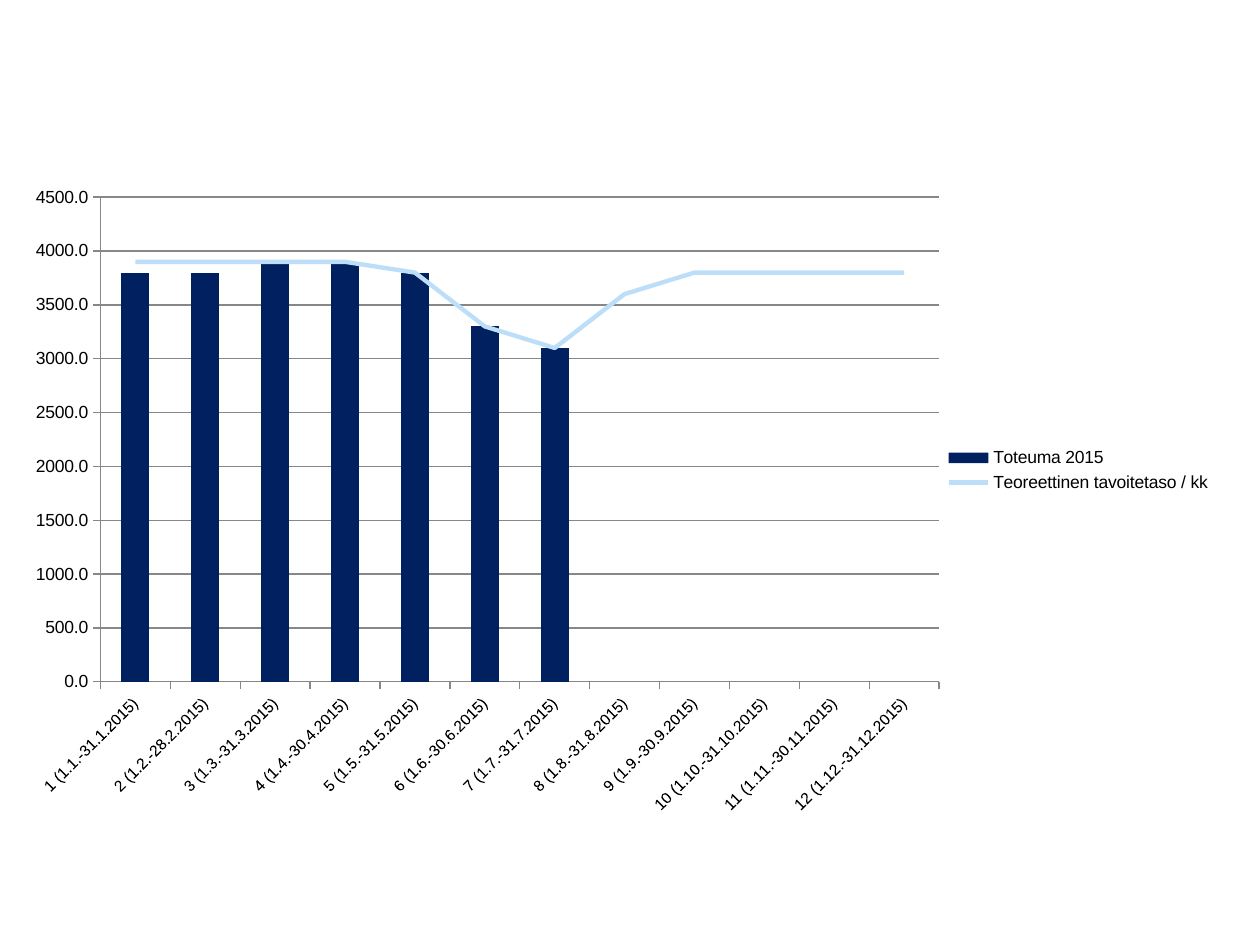
import pptx
import pptx.chart.data
import pptx.dml.color
import pptx.enum.chart
import pptx.oxml
import pptx.oxml.ns
import pptx.util

SCALE = 914400 / 126
COLORS = {"text": "000000", "actual": "002060", "target": "BDDEF8", "grid": "878787"}
MONTH_LENGTHS = [31, 28, 31, 30, 31, 30, 31, 31, 30, 31, 30, 31]
ACTUAL = [3800, 3800, 3900, 3900, 3800, 3300, 3100] + [None] * 5
TARGET = [3900, 3900, 3900, 3900, 3800, 3300, 3100, 3600, 3800, 3800, 3800, 3800]
PLOT_LAYOUT = {"x": 0.073, "y": 0.1, "w": 0.692, "h": 0.71}


def px(length):
    """Turn pixels into EMU."""
    return pptx.util.Emu(round(length * SCALE))


def rgb(name):
    """Look up a named colour."""
    return pptx.dml.color.RGBColor.from_string(COLORS[name])


def set_font(font, size):
    """Apply the chart typeface."""
    font.name = "Arial"
    font.size = pptx.util.Pt(size)
    font.bold = False
    font.color.rgb = rgb("text")


def set_line(line, color, width):
    """Give a line its colour and width in points."""
    line.color.rgb = rgb(color)
    line.width = pptx.util.Pt(width)


def move_target_to_line(chart):
    """Draw the second series as a line on the same axes."""
    qn = pptx.oxml.ns.qn
    bar_chart = chart.plots[0]._element
    series = bar_chart.findall(qn("c:ser"))[1]
    for element in series.findall(qn("c:invertIfNegative")):
        series.remove(element)
    axis_ids = "".join(
        f'<c:axId val="{axis.get("val")}"/>' for axis in bar_chart.findall(qn("c:axId"))
    )
    line_chart = pptx.oxml.parse_xml(
        f'<c:lineChart {pptx.oxml.ns.nsdecls("c")}><c:grouping val="standard"/>'
        f'<c:varyColors val="0"/><c:marker val="1"/>{axis_ids}</c:lineChart>'
    )
    line_chart.insert(2, series)
    bar_chart.addnext(line_chart)


def place_plot_area(chart):
    """Fix the inner plot area as fractions of the chart."""
    plot_area = chart.plots[0]._element.getparent()
    for layout in plot_area.findall(pptx.oxml.ns.qn("c:layout")):
        plot_area.remove(layout)
    sizes = "".join(f'<c:{key} val="{value}"/>' for key, value in PLOT_LAYOUT.items())
    plot_area.insert(0, pptx.oxml.parse_xml(
        f'<c:layout {pptx.oxml.ns.nsdecls("c")}><c:manualLayout>'
        '<c:layoutTarget val="inner"/><c:xMode val="edge"/><c:yMode val="edge"/>'
        f'{sizes}</c:manualLayout></c:layout>'
    ))


def format_axes(chart):
    """Style both axes, the gridlines and the slanted month labels."""
    for axis, size in ((chart.category_axis, 9), (chart.value_axis, 10)):
        axis.major_tick_mark = pptx.enum.chart.XL_TICK_MARK.OUTSIDE
        axis.minor_tick_mark = pptx.enum.chart.XL_TICK_MARK.NONE
        set_line(axis.format.line, "grid", 0.75)
        set_font(axis.tick_labels.font, size)
    labels = chart.category_axis._element.find(pptx.oxml.ns.qn("c:txPr"))
    labels.find(pptx.oxml.ns.qn("a:bodyPr")).set("rot", "-2700000")
    value_axis = chart.value_axis
    value_axis.minimum_scale, value_axis.maximum_scale = 0, 4500
    value_axis.major_unit = 500
    value_axis.has_major_gridlines = True
    set_line(value_axis.major_gridlines.format.line, "grid", 0.75)
    value_axis.tick_labels.number_format = "0.0"
    value_axis.tick_labels.number_format_is_linked = False


def add_monthly_chart(slide, left, top, width, height):
    """Place the monthly columns and target line in the given box."""
    data = pptx.chart.data.CategoryChartData()
    data.categories = [
        f"{month} (1.{month}.-{days}.{month}.2015)"
        for month, days in enumerate(MONTH_LENGTHS, 1)
    ]
    data.add_series("Toteuma 2015", ACTUAL)
    data.add_series("Teoreettinen tavoitetaso / kk", TARGET)
    chart = slide.shapes.add_chart(
        pptx.enum.chart.XL_CHART_TYPE.COLUMN_STACKED,
        px(left), px(top), px(width), px(height), data,
    ).chart
    chart.has_title = False
    set_font(chart.font, 10)
    move_target_to_line(chart)
    place_plot_area(chart)
    columns, lines = chart.plots
    columns.gap_width, columns.overlap = 150, 100
    columns.vary_by_categories = False
    fill = columns.series[0].format.fill
    fill.solid()
    fill.fore_color.rgb = rgb("actual")
    target = lines.series[0]
    target.smooth = False
    target.marker.style = pptx.enum.chart.XL_MARKER_STYLE.NONE
    set_line(target.format.line, "target", 2.5)
    format_axes(chart)
    chart.has_legend = True
    chart.legend.position = pptx.enum.chart.XL_LEGEND_POSITION.RIGHT
    chart.legend.include_in_layout = False
    set_font(chart.legend.font, 10)


def main():
    """Build and save the presentation."""
    presentation = pptx.Presentation()
    presentation.slide_width, presentation.slide_height = px(1260), px(945)
    slide = presentation.slides.add_slide(presentation.slide_layouts[6])
    add_monthly_chart(slide, 12, 129, 1212, 685)
    presentation.save("out.pptx")


if __name__ == "__main__":
    main()
